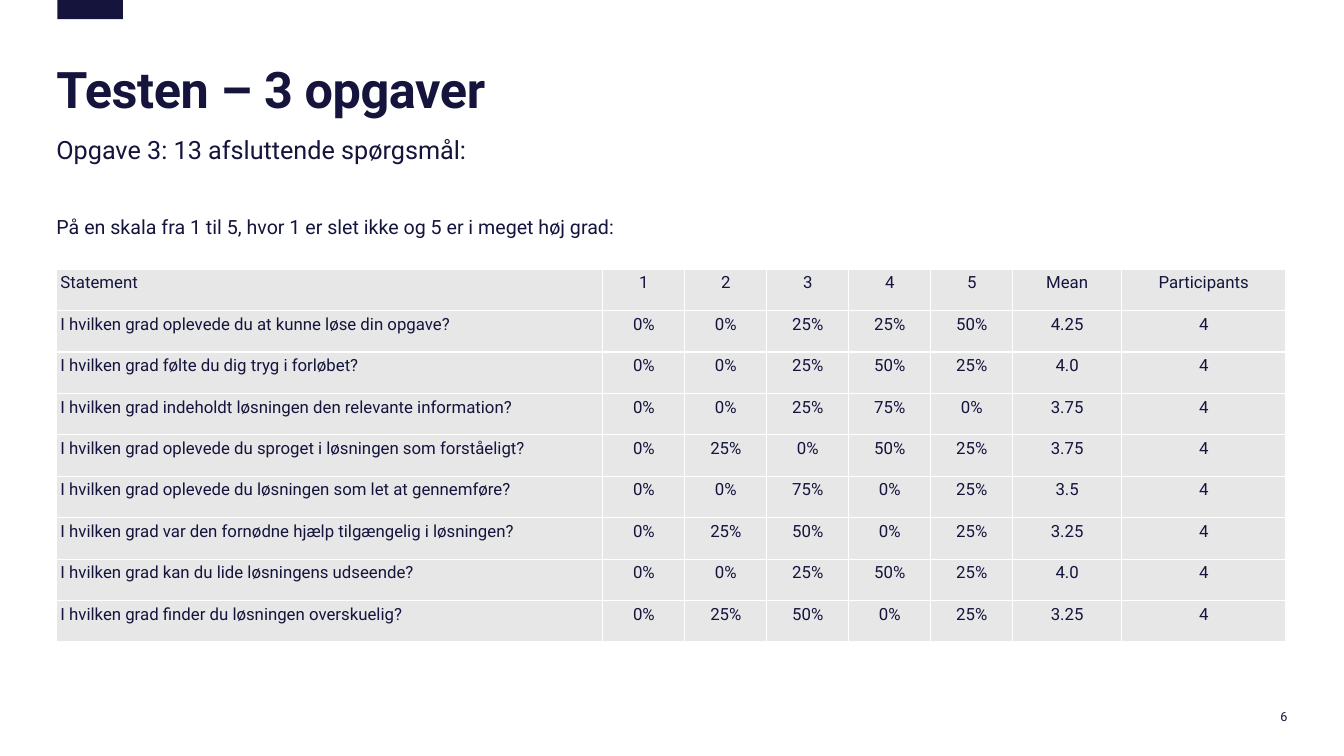
from lxml import etree
from pptx import Presentation
from pptx.dml.color import RGBColor
from pptx.enum.shapes import MSO_SHAPE
from pptx.enum.text import MSO_ANCHOR, PP_ALIGN
from pptx.oxml.ns import qn
from pptx.util import Inches, Pt

RECTANGLE = MSO_SHAPE.RECTANGLE
TOP, BOTTOM = MSO_ANCHOR.TOP, MSO_ANCHOR.BOTTOM
LEFT, CENTER, RIGHT = PP_ALIGN.LEFT, PP_ALIGN.CENTER, PP_ALIGN.RIGHT
NAVY, GREY, WHITE = "14143C", "E7E7E8", "FFFFFF"
MARGIN = 0.56


def color(hex_value):
    return RGBColor.from_string(hex_value)


def write(frame, text, size=12, bold=False, align=LEFT, anchor=TOP,
          inset=0, line_spacing=None, space_after=None, tracking=None):
    frame.word_wrap = True
    frame.vertical_anchor = anchor
    frame.margin_left = frame.margin_right = Inches(inset)
    frame.margin_top = frame.margin_bottom = Inches(inset)
    para = frame.paragraphs[0]
    para.alignment = align
    para.line_spacing = line_spacing
    para.space_after = space_after
    span = para.add_run()
    span.text = text
    span.font.name = "Roboto"
    span.font.size = Pt(size)
    span.font.bold = bold
    span.font.color.rgb = color(NAVY)
    if tracking is not None:
        span.font._element.set("spc", str(round(tracking * 100)))


deck = Presentation()
deck.slide_width, deck.slide_height = Inches(13.33), Inches(7.5)
page = deck.slides.add_slide(deck.slide_layouts[6])

# Tab at the top edge
tab = page.shapes.add_shape(RECTANGLE, Inches(0.57), 0, Inches(0.65), Inches(0.19))
tab.shadow.inherit = False
tab.fill.solid()
tab.fill.fore_color.rgb = color(NAVY)
tab.line.fill.background()

# Headings and page number
body = dict(line_spacing=1.1, space_after=Pt(12))
texts = [
    ("Opgave 3: 13 afsluttende spørgsmål:", (MARGIN, 1.3, 5.9, 0.64), dict(size=18, **body)),
    ("6", (11.04, 7.03, 1.73, 0.15), dict(size=9, align=RIGHT, anchor=BOTTOM)),
    ("Testen – 3 opgaver", (MARGIN, 0.65, 5.9, 1.01),
     dict(size=36, bold=True, line_spacing=0.89, tracking=-0.3)),
    ("På en skala fra 1 til 5, hvor 1 er slet ikke og 5 er i meget høj grad:",
     (MARGIN, 2.11, 5.9, 0.47), dict(size=14, **body)),
]
for text, place, style in texts:
    box = page.shapes.add_textbox(*map(Inches, place))
    write(box.text_frame, text, **style)

# Table of answers
rows = [
    ("Statement", "1", "2", "3", "4", "5", "Mean", "Participants"),
    ("I hvilken grad oplevede du at kunne løse din opgave?",
     "0%", "0%", "25%", "25%", "50%", "4.25", "4"),
    ("I hvilken grad følte du dig tryg i forløbet?",
     "0%", "0%", "25%", "50%", "25%", "4.0", "4"),
    ("I hvilken grad indeholdt løsningen den relevante information?",
     "0%", "0%", "25%", "75%", "0%", "3.75", "4"),
    ("I hvilken grad oplevede du sproget i løsningen som forståeligt?",
     "0%", "25%", "0%", "50%", "25%", "3.75", "4"),
    ("I hvilken grad oplevede du løsningen som let at gennemføre?",
     "0%", "0%", "75%", "0%", "25%", "3.5", "4"),
    ("I hvilken grad var den fornødne hjælp tilgængelig i løsningen?",
     "0%", "25%", "50%", "0%", "25%", "3.25", "4"),
    ("I hvilken grad kan du lide løsningens udseende?",
     "0%", "0%", "25%", "50%", "25%", "4.0", "4"),
    ("I hvilken grad finder du løsningen overskuelig?",
     "0%", "25%", "50%", "0%", "25%", "3.25", "4"),
]
widths = [5.42] + [0.813] * 5 + [1.08, 1.63]
table = page.shapes.add_table(len(rows), len(widths), Inches(MARGIN), Inches(2.67),
                              Inches(sum(widths)), Inches(3.7)).table
table.horz_banding = False
for column, width in zip(table.columns, widths):
    column.width = Inches(width)

for row_index, values in enumerate(rows):
    for column_index, value in enumerate(values):
        cell = table.cell(row_index, column_index)
        write(cell.text_frame, value, align=CENTER if column_index else LEFT)
        cell.margin_left = cell.margin_right = Inches(0.04)
        cell.margin_top = cell.margin_bottom = Inches(0.04)
        cell.vertical_anchor = TOP

        # White borders, then the grey fill
        properties = cell._tc.get_or_add_tcPr()
        for side in ("a:lnL", "a:lnR", "a:lnT", "a:lnB"):
            border = etree.SubElement(properties, qn(side), w=str(Pt(1)))
            paint = etree.SubElement(border, qn("a:solidFill"))
            etree.SubElement(paint, qn("a:srgbClr"), val=WHITE)
        cell.fill.solid()
        cell.fill.fore_color.rgb = color(GREY)

deck.save("out.pptx")
